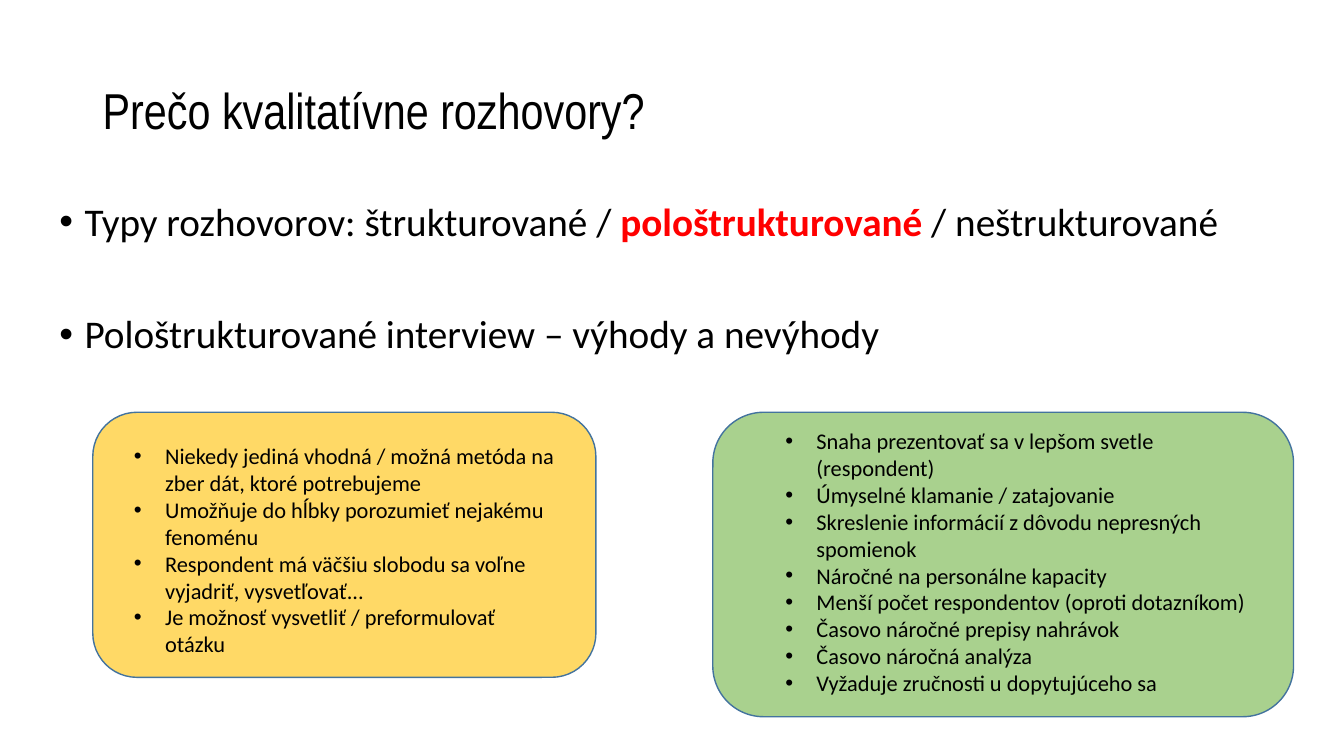
"""Build the slide on qualitative interviews with its pros and cons cards."""
import dataclasses
import typing

import lxml.etree
import pptx
import pptx.dml.color
import pptx.enum.shapes
import pptx.enum.text
import pptx.oxml.ns
import pptx.util

EMU_PER_PX = 9144
COLOURS = {
    "background": "FFFFFF",
    "text": "000000",
    "highlight": "FF0000",
    "advantages": "FFD966",
    "disadvantages": "A9D18E",
    "outline": "43739E",
}


class Box(typing.NamedTuple):
    left: int
    top: int
    width: int
    height: int


class Run(typing.NamedTuple):
    text: str
    colour: str = "text"
    bold: bool = False


@dataclasses.dataclass(frozen=True)
class Paragraph:
    runs: tuple[Run, ...]
    space_before: int = 0


@dataclasses.dataclass(frozen=True)
class TextBlock:
    box: Box
    paragraphs: tuple[Paragraph, ...]
    size: int
    font: str = "Calibri"
    line_spacing: float = 1.0
    indent: int = 0
    frame_format: dict[str, typing.Any] = dataclasses.field(default_factory=dict)


@dataclasses.dataclass(frozen=True)
class Card:
    box: Box
    fill: str
    text_box: Box
    items: tuple[str, ...]


TITLE = TextBlock(
    Box(92, 40, 1150, 145),
    (Paragraph((Run("Prečo kvalitatívne rozhovory?"),)),),
    size=36,
    font="Arial Narrow",
    line_spacing=0.9,
    frame_format={"vertical_anchor": pptx.enum.text.MSO_ANCHOR.MIDDLE},
)
INTERVIEW_TYPES = TextBlock(
    Box(49, 196, 1248, 476),
    (
        Paragraph(
            (
                Run("Typy rozhovorov: štrukturované / "),
                Run("pološtrukturované", "highlight", True),
                Run(" / neštrukturované"),
            ),
            space_before=10,
        ),
        Paragraph((Run("Pološtrukturované interview – výhody a nevýhody"),), space_before=50),
    ),
    size=28,
    line_spacing=0.9,
    indent=25,
)
CARDS = (
    Card(
        Box(92, 409, 499, 263),
        "advantages",
        Box(123, 434, 441, 226),
        (
            "Niekedy jediná vhodná / možná metóda na zber dát, ktoré potrebujeme",
            "Umožňuje do hĺbky porozumieť nejakému fenoménu",
            "Respondent má väčšiu slobodu sa voľne vyjadriť, vysvetľovať...",
            "Je možnosť vysvetliť / preformulovať otázku",
        ),
    ),
    Card(
        Box(707, 409, 576, 302),
        "disadvantages",
        Box(769, 419, 483, 279),
        (
            "Snaha prezentovať sa v lepšom svetle (respondent)",
            "Úmyselné klamanie / zatajovanie",
            "Skreslenie informácií z dôvodu nepresných spomienok",
            "Náročné na personálne kapacity",
            "Menší počet respondentov (oproti dotazníkom)",
            "Časovo náročné prepisy nahrávok",
            "Časovo náročná analýza",
            "Vyžaduje zručnosti u dopytujúceho sa",
        ),
    ),
)


def px(length: int) -> pptx.util.Emu:
    return pptx.util.Emu(length * EMU_PER_PX)


def rgb(name: str) -> pptx.dml.color.RGBColor:
    return pptx.dml.color.RGBColor.from_string(COLOURS[name])


def apply_format(target: typing.Any, values: dict[str, typing.Any]) -> None:
    for name, value in values.items():
        setattr(target, name, value)


def add_bullet(paragraph: typing.Any, indent: int) -> None:
    properties = paragraph._p.get_or_add_pPr()
    properties.set("marL", str(px(indent)))
    properties.set("indent", str(px(-indent)))
    for tag, attribute, value in (("a:buFont", "typeface", "Arial"), ("a:buChar", "char", "•")):
        element = lxml.etree.SubElement(properties, pptx.oxml.ns.qn(tag))
        element.set(attribute, value)


def draw_text(slide: typing.Any, block: TextBlock) -> None:
    frame = slide.shapes.add_textbox(*map(px, block.box)).text_frame
    apply_format(frame, {"word_wrap": True, **block.frame_format})
    for index, content in enumerate(block.paragraphs):
        paragraph = frame.add_paragraph() if index else frame.paragraphs[0]
        paragraph_format = {
            "line_spacing": block.line_spacing,
            "space_before": pptx.util.Pt(content.space_before),
        }
        apply_format(paragraph, paragraph_format)
        if block.indent:
            add_bullet(paragraph, block.indent)
        for part in content.runs:
            run = paragraph.add_run()
            run.text = part.text
            font_format = {"name": block.font, "size": pptx.util.Pt(block.size), "bold": part.bold}
            apply_format(run.font, font_format)
            run.font.color.rgb = rgb(part.colour)


def draw_card(slide: typing.Any, card: Card) -> None:
    rounded = pptx.enum.shapes.MSO_SHAPE.ROUNDED_RECTANGLE
    shape = slide.shapes.add_shape(rounded, *map(px, card.box))
    shape.shadow.inherit = False
    shape.fill.solid()
    shape.fill.fore_color.rgb = rgb(card.fill)
    shape.line.color.rgb = rgb("outline")
    shape.line.width = pptx.util.Pt(1)
    paragraphs = tuple(Paragraph((Run(item),)) for item in card.items)
    fit = {"auto_size": pptx.enum.text.MSO_AUTO_SIZE.SHAPE_TO_FIT_TEXT}
    draw_text(slide, TextBlock(card.text_box, paragraphs, size=16, indent=31, frame_format=fit))


def main() -> None:
    presentation = pptx.Presentation()
    apply_format(presentation, {"slide_width": px(1333), "slide_height": px(750)})
    slide = presentation.slides.add_slide(presentation.slide_layouts[6])
    slide.background.fill.solid()
    slide.background.fill.fore_color.rgb = rgb("background")
    for block in (TITLE, INTERVIEW_TYPES):
        draw_text(slide, block)
    for card in CARDS:
        draw_card(slide, card)
    presentation.save("out.pptx")


if __name__ == "__main__":
    main()
